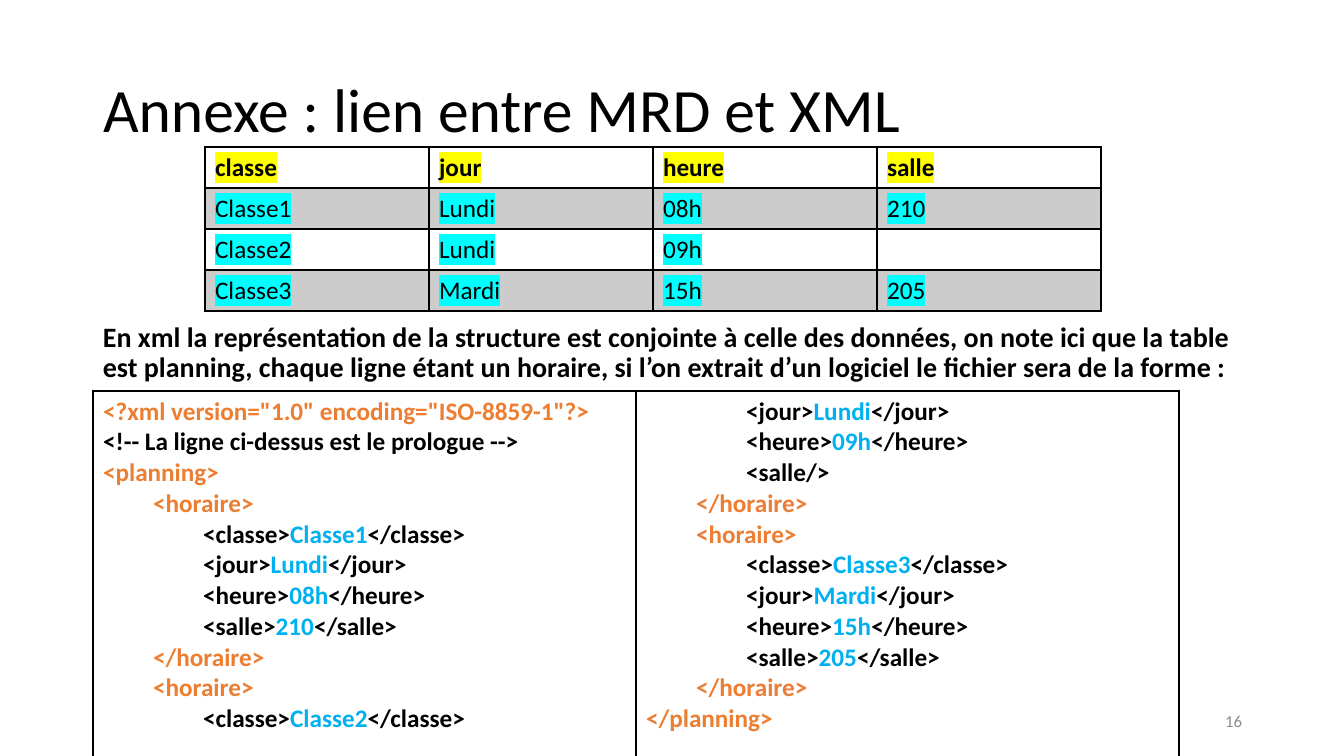
from lxml.etree import SubElement
from pptx import Presentation
from pptx.dml.color import RGBColor
from pptx.enum.text import MSO_ANCHOR as Anchor, PP_ALIGN as Align
from pptx.oxml import parse_xml
from pptx.oxml.ns import nsdecls, qn
from pptx.util import Pt

FONT = "Calibri"
BLACK, WHITE, ORANGE, BLUE = "000000", "FFFFFF", "ED7D31", "00B0F0"
YELLOW, CYAN, GREY = "FFFF00", "00FFFF", "8C8C8C"

TITLE = "Annexe : lien entre MRD et XML"
FIELDS = ["classe", "jour", "heure", "salle"]
RECORDS = [
    ["Classe1", "Lundi", "08h", "210"],
    ["Classe2", "Lundi", "09h", ""],
    ["Classe3", "Mardi", "15h", "205"],
]
CAPTION = (
    "En xml la représentation de la structure est conjointe à celle des données, "
    "on note ici que la table est planning, chaque ligne étant un horaire, "
    "si l’on extrait d’un logiciel le fichier sera de la forme :"
)
PROLOGUE = '<?xml version="1.0" encoding="ISO-8859-1"?>'
COMMENT = "<!-- La ligne ci-dessus est le prologue -->"
PAGE = "16"

# Left, top, width, height in px
TITLE_BOX = (93, 40, 1159, 146)
PLANNING_BOX = (205, 147, 896, 164)
CAPTION_BOX = (93, 318, 1159, 70)
CODE_BOX = (93, 391, 1086, 373)
PAGE_BOX = (950, 701, 302, 40)
INDENT = 50
LINES_PER_COLUMN = 11
EMU_PER_PX = 914400 / 100.8


def px(n):
    return round(n * EMU_PER_PX)


def emu(box):
    return [px(n) for n in box]


def rgb(color):
    return RGBColor.from_string(color)


def style(r, size, color=BLACK, bold=False, highlight=None):
    r.font.name, r.font.size, r.font.bold = FONT, Pt(size), bold
    r.font.color.rgb = rgb(color)
    if highlight:
        r._r.rPr.find(qn("a:solidFill")).addnext(parse_xml(
            f'<a:highlight {nsdecls("a")}><a:srgbClr val="{highlight}"/></a:highlight>'))


def add_text(slide, box, text, size, color=BLACK, bold=False):
    tf = slide.shapes.add_textbox(*emu(box)).text_frame
    tf.word_wrap = True
    p = tf.paragraphs[0]
    p.text = text
    style(p.runs[0], size, color, bold)
    return tf


def set_borders(cell, **widths):
    """Draw black borders of 1 pt, or of the width given for a side (L, R, T, B)."""
    for i, side in enumerate("LRTB"):
        cell._tc.get_or_add_tcPr().insert(i, parse_xml(
            f'<a:ln{side} {nsdecls("a")} w="{Pt(widths.get(side, 1))}"><a:solidFill>'
            f'<a:srgbClr val="{BLACK}"/></a:solidFill></a:ln{side}>'))


def add_grid(slide, rows, cols, box):
    """Add an unbanded table with equal rows and columns."""
    table = slide.shapes.add_table(rows, cols, *emu(box)).table
    table.first_row = table.horz_banding = False
    for cell in table.iter_cells():
        cell.fill.background()
    return table


def xml_lines():
    """Return each line of the XML file as (level, [(text, colour), ...])."""
    lines = [(0, [(PROLOGUE, ORANGE)]), (0, [(COMMENT, BLACK)]), (0, [("<planning>", ORANGE)])]
    for record in RECORDS:
        lines.append((1, [("<horaire>", ORANGE)]))
        for field, value in zip(FIELDS, record):
            parts = [(f"<{field}>", BLACK), (value, BLUE), (f"</{field}>", BLACK)]
            lines.append((2, parts if value else [(f"<{field}/>", BLACK)]))
        lines.append((1, [("</horaire>", ORANGE)]))
    return lines + [(0, [("</planning>", ORANGE)])]


def add_planning(slide):
    table = add_grid(slide, len(RECORDS) + 1, len(FIELDS), PLANNING_BOX)
    for i, values in enumerate([FIELDS] + RECORDS):
        header = i == 0
        for j, value in enumerate(values):
            cell = table.cell(i, j)
            if i % 2:
                cell.fill.solid()
                cell.fill.fore_color.rgb = rgb(BLACK)
                tint = cell._tc.tcPr.find(".//" + qn("a:srgbClr"))
                SubElement(tint, qn("a:alpha"), val="20000")
            set_borders(cell, B=2 if header else 1, T=2 if i == 1 else 1)
            if value:
                cell.text = value
                r = cell.text_frame.paragraphs[0].runs[0]
                style(r, 18, bold=header, highlight=YELLOW if header else CYAN)


def add_code(slide):
    table = add_grid(slide, 1, 2, CODE_BOX)
    lines = xml_lines()
    for j in range(2):
        cell = table.cell(0, j)
        set_borders(cell)
        tf = cell.text_frame
        start = j * LINES_PER_COLUMN
        for n, (level, parts) in enumerate(lines[start:start + LINES_PER_COLUMN]):
            p = tf.add_paragraph() if n else tf.paragraphs[0]
            p.level = level
            pPr = p._p.get_or_add_pPr()
            pPr.set("marL", str(px(level * INDENT)))
            pPr.set("indent", "0")
            for text, color in parts:
                r = p.add_run()
                r.text = text
                style(r, 18, color, bold=True)


def main():
    prs = Presentation()
    prs.slide_width, prs.slide_height = px(1344), px(756)
    slide = prs.slides.add_slide(prs.slide_layouts[5])
    slide.background.fill.solid()
    slide.background.fill.fore_color.rgb = rgb(WHITE)

    title = slide.shapes.title
    title.left, title.top, title.width, title.height = emu(TITLE_BOX)
    tf = title.text_frame
    tf.text = TITLE
    tf.vertical_anchor = Anchor.MIDDLE
    p = tf.paragraphs[0]
    p.alignment, p.line_spacing = Align.LEFT, 0.9
    style(p.runs[0], 44)

    caption = add_text(slide, CAPTION_BOX, CAPTION, 20, bold=True)
    caption.paragraphs[0].line_spacing = 0.9

    page = add_text(slide, PAGE_BOX, PAGE, 12, GREY)
    page.vertical_anchor = Anchor.MIDDLE
    page.paragraphs[0].alignment = Align.RIGHT

    add_planning(slide)
    add_code(slide)
    prs.save("out.pptx")


if __name__ == "__main__":
    main()
